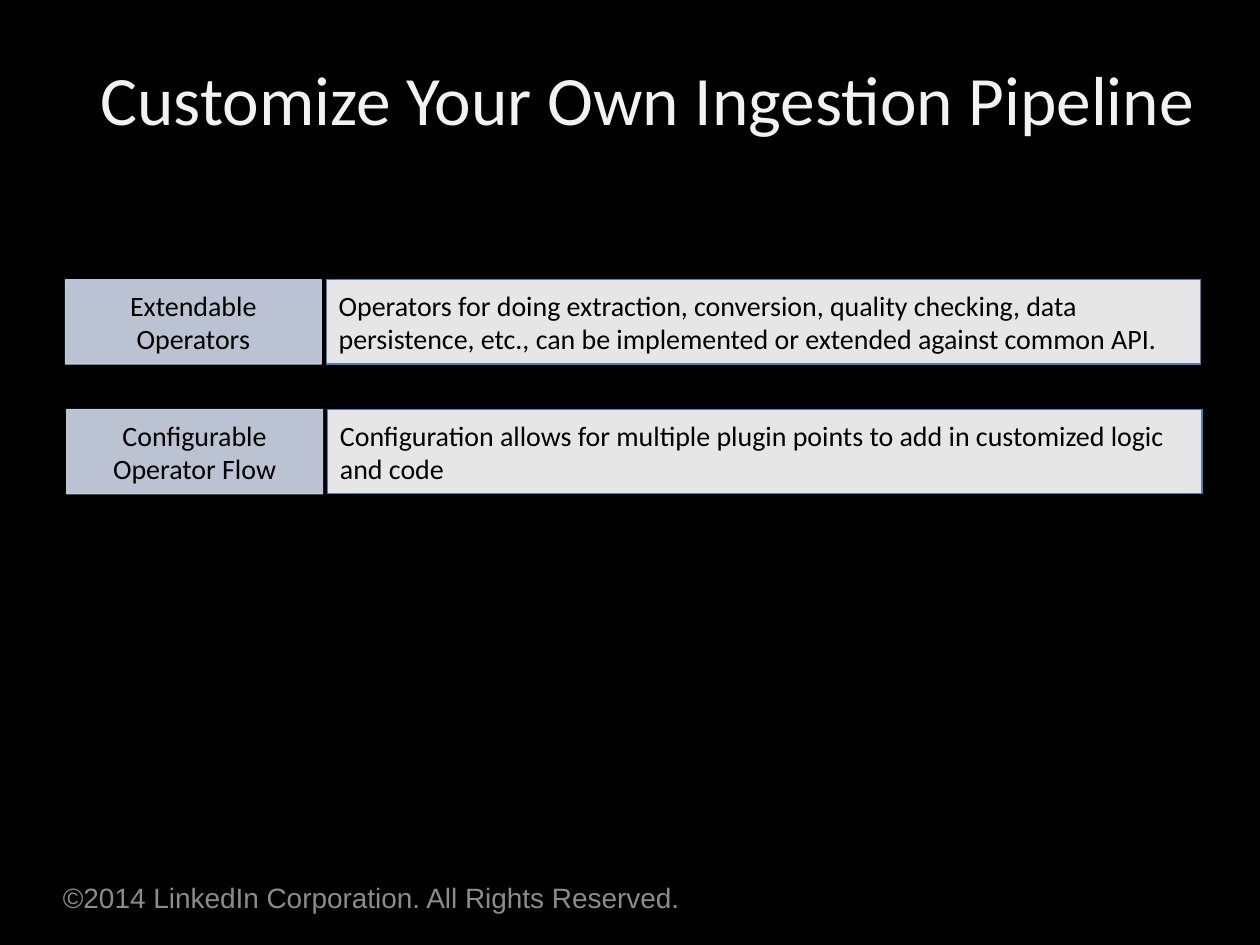
"""Build the slide on customizing an ingestion pipeline."""
from lxml import etree
from pptx import Presentation
from pptx.dml.color import RGBColor
from pptx.enum import shapes, text
from pptx.oxml.ns import qn
from pptx.util import Inches, Pt

TITLE = "Customize Your Own Ingestion Pipeline"
FOOTER = "©2014 LinkedIn Corporation. All Rights Reserved."
ROWS = [
    ("Extendable Operators",
     "Operators for doing extraction, conversion, quality checking, data persistence, etc., "
     "can be implemented or extended against common API.", 0.52, 2.22),
    ("Configurable Operator Flow",
     "Configuration allows for multiple plugin points to add in customized logic and code",
     0.53, 3.25),
]
LABEL_W, DETAIL_W, ROW_H, GAP = 2.03, 6.94, 0.67, 0.04
OPACITY = 90

BLACK = RGBColor(0x00, 0x00, 0x00)
WHITE = RGBColor(0xFF, 0xFF, 0xFF)
TITLE_GREY = RGBColor(0xF2, 0xF2, 0xF2)
FOOTER_GREY = RGBColor(0x8C, 0x8C, 0x8C)
LABEL_FILL = RGBColor(0xD0, 0xD8, 0xE8)
LABEL_LINE = RGBColor(0xCB, 0xD3, 0xE3)
DETAIL_LINE = RGBColor(0x4B, 0x7E, 0xBC)


def write(sp, words, size, color, align, font="Calibri"):
    tf = sp.text_frame
    tf.word_wrap = True
    tf.vertical_anchor = text.MSO_ANCHOR.MIDDLE
    p = tf.paragraphs[0]
    p.alignment = align
    r = p.add_run()
    r.text = words
    r.font.size, r.font.name = Pt(size), font
    r.font.color.rgb = color


def set_opacity(fill_parent):
    color = fill_parent.find(qn("a:solidFill"))[0]
    etree.SubElement(color, qn("a:alpha")).set("val", str(OPACITY * 1000))


def add_box(s, words, x, y, w, fill, line, align, clear_line=False):
    sp = s.shapes.add_shape(shapes.MSO_SHAPE.RECTANGLE,
                            Inches(x), Inches(y), Inches(w), Inches(ROW_H))
    sp.shadow.inherit = False
    sp.fill.solid()
    sp.fill.fore_color.rgb = fill
    sp.line.color.rgb = line
    sp.line.width = Pt(0.75)
    sp_pr = sp.fill._xPr
    set_opacity(sp_pr)
    if clear_line:
        set_opacity(sp_pr.find(qn("a:ln")))
    write(sp, words, 16, BLACK, align)


def main():
    prs = Presentation()
    prs.slide_width, prs.slide_height = Inches(10), Inches(7.5)
    s = prs.slides.add_slide(prs.slide_layouts[5])
    s.background.fill.solid()
    s.background.fill.fore_color.rgb = BLACK

    title = s.shapes.title
    title.left, title.top = Inches(0.39), Inches(0.15)
    title.width, title.height = Inches(9.5), Inches(1.25)
    write(title, TITLE, 39.6, TITLE_GREY, text.PP_ALIGN.CENTER)

    footer = s.shapes.add_textbox(Inches(0.5), Inches(7.03), Inches(5.87), Inches(0.18))
    tf = footer.text_frame
    tf.margin_left = tf.margin_right = tf.margin_top = tf.margin_bottom = 0
    write(footer, FOOTER, 16, FOOTER_GREY, text.PP_ALIGN.LEFT, "Arial")

    for label, detail, x, y in ROWS:
        add_box(s, label, x, y, LABEL_W, LABEL_FILL, LABEL_LINE,
                text.PP_ALIGN.CENTER, clear_line=True)
        add_box(s, detail, x + LABEL_W + GAP, y, DETAIL_W, WHITE, DETAIL_LINE,
                text.PP_ALIGN.LEFT)

    prs.save("out.pptx")


if __name__ == "__main__":
    main()
